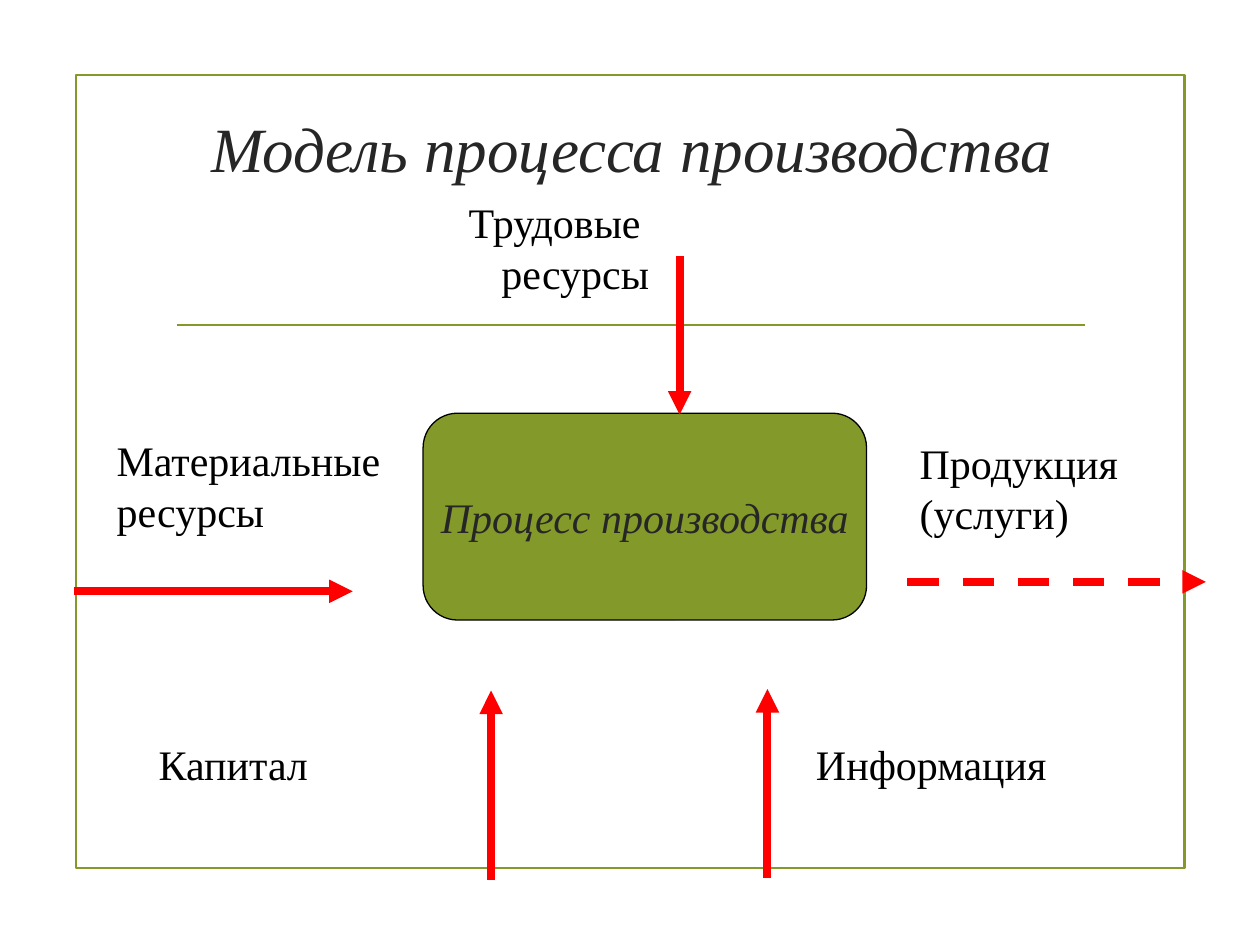
from pptx import Presentation
from pptx.dml.color import RGBColor
from pptx.enum.dml import MSO_LINE
from pptx.enum.shapes import MSO_CONNECTOR, MSO_SHAPE
from pptx.enum.text import MSO_ANCHOR, MSO_AUTO_SIZE, PP_ALIGN
from pptx.oxml import parse_xml
from pptx.oxml.ns import nsdecls, qn
from pptx.oxml.xmlchemy import OxmlElement
from pptx.util import Cm, Pt

DASH = MSO_LINE.DASH
STRAIGHT = MSO_CONNECTOR.STRAIGHT
RECTANGLE = MSO_SHAPE.RECTANGLE
MIDDLE = MSO_ANCHOR.MIDDLE
CENTER, LEFT = PP_ALIGN.CENTER, PP_ALIGN.LEFT
NO_AUTOFIT = MSO_AUTO_SIZE.NONE


def rgb(value):
    return RGBColor.from_string(value)


class ProcessSlide:
    """Holds the style and the slide being built."""
    font = "Times New Roman"
    green, red, black, dark = "83992A", "FF0000", "000000", "262626"
    title_size, text_size = 36, 24
    thin, frame_width, arrow_width = 0.75, 1.25, 4.5

    def __init__(self, slide):
        self.slide = slide

    def place(self, shape, box):
        shape.left, shape.top, shape.width, shape.height = map(Cm, box)

    def format_text(self, frame, size, color, italic=False, align=LEFT):
        for paragraph in frame.paragraphs:
            paragraph.alignment = align
            for run in paragraph.runs:
                run.font.name = self.font
                run.font.size = Pt(size)
                run.font.italic = italic
                run.font.color.rgb = rgb(color)

    def stroke(self, line, color, width):
        line.color.rgb = rgb(color)
        line.width = Pt(width)

    def frame(self, box):
        border = self.slide.shapes.add_shape(RECTANGLE, *map(Cm, box))
        border.shadow.inherit = False
        border.fill.background()
        self.stroke(border.line, self.green, self.frame_width)

    def rule(self, start, end, color=green, width=frame_width):
        rule = self.slide.shapes.add_connector(
            STRAIGHT, *map(Cm, (*start, *end)))
        self.stroke(rule.line, color, width)
        rule._element.spPr.append(OxmlElement("a:effectLst"))
        return rule

    def arrow(self, start, end, dashed=False):
        arrow = self.rule(start, end, self.red, self.arrow_width)
        if dashed:
            arrow.line.dash_style = DASH
        head = OxmlElement("a:tailEnd")
        head.set("type", "triangle")
        arrow._element.spPr.find(qn("a:ln")).append(head)

    def title(self, text, box):
        title = self.slide.shapes.title
        self.place(title, box)
        title.text_frame.text = text
        title.text_frame.vertical_anchor = MIDDLE
        self.format_text(title.text_frame, self.title_size, self.dark,
                         italic=True, align=CENTER)

    def process(self, text, box):
        process = self.slide.placeholders[1]
        self.place(process, box)
        process._element.spPr.append(parse_xml(
            f'<a:prstGeom {nsdecls("a")} prst="roundRect"><a:avLst>'
            '<a:gd name="adj" fmla="val 16667"/></a:avLst></a:prstGeom>'))
        process.fill.solid()
        process.fill.fore_color.rgb = rgb(self.green)
        self.stroke(process.line, self.black, self.thin)
        frame = process.text_frame
        frame.text = text
        frame.auto_size = NO_AUTOFIT
        frame.word_wrap = False
        frame.vertical_anchor = MIDDLE
        paragraph = frame.paragraphs[0]
        properties = paragraph._p.get_or_add_pPr()
        properties.set("marL", "0")
        properties.set("indent", "0")
        properties.append(OxmlElement("a:buNone"))
        paragraph.space_before = Pt(0)
        paragraph.space_after = Pt(6)
        self.format_text(frame, self.text_size, self.dark,
                         italic=True, align=CENTER)

    def label(self, text, box, margin=0, hanging=0):
        label = self.slide.shapes.add_textbox(*map(Cm, box))
        frame = label.text_frame
        frame.word_wrap = True
        frame.text = text
        if margin:
            properties = frame.paragraphs[0]._p.get_or_add_pPr()
            properties.set("marL", str(Cm(margin)))
            properties.set("indent", str(-Cm(hanging)))
        self.format_text(frame, self.text_size, self.black)


def main():
    deck = Presentation()
    deck.slide_width, deck.slide_height = Cm(25.4), Cm(19.05)
    model = ProcessSlide(deck.slides.add_slide(deck.slide_layouts[1]))

    # Frame and rule under the heading
    model.frame((1.54, 1.51, 22.34, 15.99))
    model.rule((3.56, 6.55), (21.87, 6.55))

    # Heading and the process in the middle
    model.title("Модель процесса производства", (3.28, 1.73, 18.9, 2.46))
    model.process("Процесс производства", (8.53, 8.33, 8.94, 4.17))

    # Inputs and output
    model.label("Трудовые ресурсы", (8.46, 3.84, 6.25, 2.31),
                margin=1.4, hanging=0.66)
    model.label("Материальные\nресурсы", (2.1, 8.64, 5.84, 2.31))
    model.label("Продукция\n(услуги)", (18.29, 8.69, 5.49, 2.31))
    model.label("Капитал", (2.95, 14.76, 6.15, 1.27))
    model.label("Информация", (16.2, 14.76, 5.94, 1.27))

    # Flows into and out of the process
    model.arrow((13.7, 5.16), (13.7, 8.36))
    model.arrow((1.5, 11.92), (7.11, 11.92))
    model.arrow((18.29, 11.73), (24.31, 11.73), dashed=True)
    model.arrow((9.9, 17.73), (9.9, 13.92))
    model.arrow((15.47, 17.7), (15.47, 13.89))

    deck.save("out.pptx")


if __name__ == "__main__":
    main()
